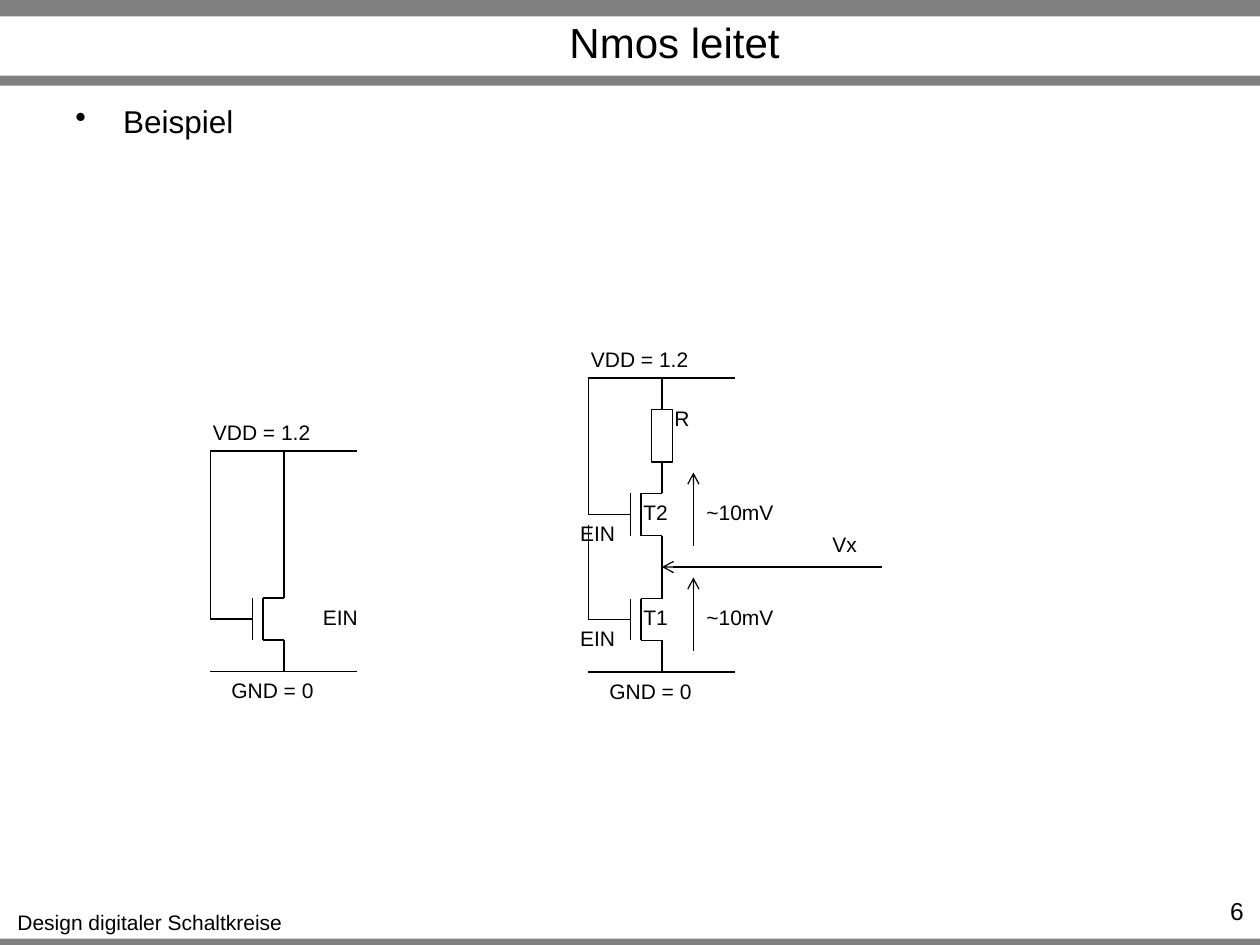
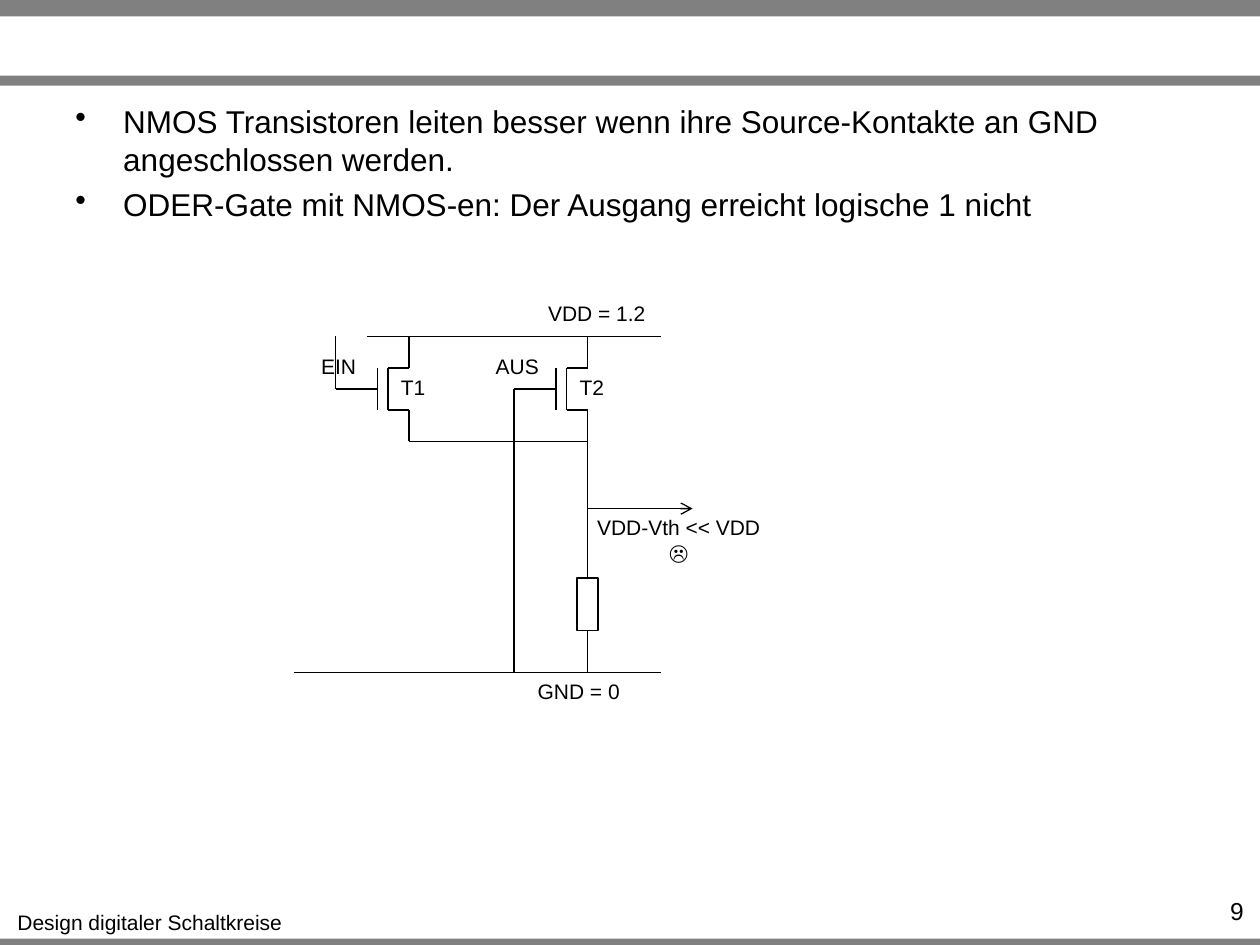
import dataclasses
import typing

import pptx
import pptx.dml.color
import pptx.enum.shapes
import pptx.enum.text
import pptx.oxml
import pptx.oxml.ns
import pptx.util

Inches = pptx.util.Inches
Pt = pptx.util.Pt
ALIGN = pptx.enum.text.PP_ALIGN
ANCHOR = pptx.enum.text.MSO_ANCHOR
RECTANGLE = pptx.enum.shapes.MSO_SHAPE.RECTANGLE
STRAIGHT = pptx.enum.shapes.MSO_CONNECTOR.STRAIGHT

COLORS = {"ink": "000000", "band": "808080"}
FONT = "Arial"
WIRE_WIDTH = Pt(0.75)
GRID = 1 / 12  # circuit grid step in inches
BANDS = [(7.45, 0.08), (0, 0.13), (0.6, 0.08)]  # top, height
LABEL_WIDTHS = {"VDD = 1.2": 0.98, "GND = 0": 0.86, "~10mV": 0.74,
                "EIN": 0.48, "AUS": 0.55, "T1": 0.4, "T2": 0.4,
                "R": 0.32, "Vx": 0.4}


def color(name):
    return pptx.dml.color.RGBColor.from_string(COLORS[name])


def drawing_element(tag, attributes=""):
    namespace = pptx.oxml.ns.nsdecls("a")
    return pptx.oxml.parse_xml(f"<a:{tag} {namespace} {attributes}/>")


def add_text(slide, box, text, size=12, align=ALIGN.CENTER, anchor=ANCHOR.TOP,
             wrap=True, bullet=False, side_inset=0.1):
    """Write text into box (left, top, width, height in inches), a paragraph per line."""
    frame = slide.shapes.add_textbox(*map(Inches, box)).text_frame
    frame.word_wrap = wrap
    frame.vertical_anchor = anchor
    frame.margin_left = frame.margin_right = Inches(side_inset)
    frame.text = text
    for paragraph in frame.paragraphs:
        paragraph.alignment = align
        font = paragraph.runs[0].font
        font.name, font.size = FONT, Pt(size)
        font.color.rgb = color("ink")
        if bullet:
            paragraph.space_before = Pt(4.5)
            properties = paragraph._p.get_or_add_pPr()
            properties.set("marL", str(Inches(0.38)))
            properties.set("indent", str(-Inches(0.38)))
            properties.append(drawing_element("buChar", 'char="•"'))


def add_rectangle(slide, box, fill=None, line=None):
    shape = slide.shapes.add_shape(RECTANGLE, *map(Inches, box))
    shape.shadow.inherit = False
    if fill:
        shape.fill.solid()
        shape.fill.fore_color.rgb = color(fill)
    else:
        shape.fill.background()
    if line:
        shape.line.color.rgb = color(line)
        shape.line.width = WIRE_WIDTH
    else:
        shape.line.fill.background()


@dataclasses.dataclass
class Circuit:
    """Draws parts in grid steps from its left and top, which are in inches."""
    slide: typing.Any
    left: float
    top: float

    def place(self, x, y):
        return self.left + x * GRID, self.top + y * GRID

    def wire(self, x1, y1, x2, y2, arrow=False):
        ends = self.place(x1, y1) + self.place(x2, y2)
        connector = self.slide.shapes.add_connector(STRAIGHT, *map(Inches, ends))
        connector.line.color.rgb = color("ink")
        connector.line.width = WIRE_WIDTH
        if arrow:
            connector.line._get_or_add_ln().append(
                drawing_element("tailEnd", 'type="arrow"'))
        connector._element.spPr.append(drawing_element("effectLst"))

    def wires(self, *segments):
        for segment in segments:
            self.wire(*segment)

    def label(self, text, x, y):
        box = (*self.place(x, y), LABEL_WIDTHS[text], 0.3)
        add_text(self.slide, box, text, wrap=False)

    def labels(self, *items):
        for item in items:
            self.label(*item)

    def resistor(self, x, y):
        add_rectangle(self.slide, (*self.place(x, y), 2 * GRID, 5 * GRID), line="ink")

    def transistor(self, x, y):
        """Gate lead at the left, drain and source at the right, 7 by 10 steps."""
        part = Circuit(self.slide, *self.place(x, y))
        part.wires(
            (7, 7, 5, 7), (5, 7, 5, 3), (2, 5, 4, 5), (4, 7, 4, 3),
            (7, 3, 5, 3), (7, 3, 7, 0), (7, 10, 7, 7), (2, 5, 0, 5))


def add_base_slide(deck, number, body, title=None):
    slide = deck.slides.add_slide(deck.slide_layouts[6])
    for top, height in BANDS:
        add_rectangle(slide, (0, top, 10, height), fill="band")
    add_text(slide, (0.03, 7.17, 2.32, 0.3), "Design digitaler Schaltkreise", wrap=False)
    if title:
        add_text(slide, (1.3, 0.14, 8.2, 0.38), title, size=24, anchor=ANCHOR.MIDDLE)
    add_text(slide, (0.5, 0.76, 9, 0.66), body, size=18, align=ALIGN.LEFT, bullet=True)
    add_text(slide, (9.1, 7.06, 0.87, 0.24), number, size=14, align=ALIGN.RIGHT)
    return slide


def draw_single_nmos(slide, left, top):
    circuit = Circuit(slide, left, top)
    circuit.transistor(0, 11)
    circuit.wires((7, 11, 7, 0), (0, 21, 14, 21), (0, 0, 14, 0), (0, 16, 0, 0))
    circuit.labels(("VDD = 1.2", -1, -3.6), ("GND = 0", 0.75, 21), ("EIN", 9.5, 14))


def draw_stacked_nmos(slide, left, top):
    circuit = Circuit(slide, left, top)
    circuit.wires((0, 28, 14, 28), (0, 0, 14, 0), (7, 3, 7, 0),
                  (0, 23, 0, 14), (0, 13, 0, 0))
    circuit.resistor(6, 3)
    for name, y in (("T1", 18), ("T2", 8)):
        circuit.transistor(0, y)
        circuit.wire(10, y + 8, 10, y + 1, arrow=True)
        circuit.labels(("~10mV", 10, y + 3), ("EIN", -2, y + 5), (name, 4, y + 3))
    circuit.wire(28, 18, 7, 18, arrow=True)
    circuit.labels(("VDD = 1.2", -1, -3.6), ("GND = 0", 0.75, 28),
                   ("R", 7, 2), ("Vx", 22, 14))


def draw_or_gate(slide, left, top):
    circuit = Circuit(slide, left, top)
    for name, x in (("T1", 4), ("T2", 21)):
        circuit.transistor(x, 0)
        circuit.label(name, x + 5, 3)
    circuit.wires((0, 32, 21, 32), (21, 32, 35, 32), (7, 0, 35, 0),
                  (28, 23, 28, 20), (28, 32, 28, 28), (4, 0, 4, 5),
                  (28, 21, 28, 10), (11, 10, 28, 10), (21, 5, 21, 32))
    circuit.resistor(27, 23)
    circuit.wire(28, 16.4, 38, 16.4, arrow=True)
    circuit.labels(("VDD = 1.2", 23, -4), ("GND = 0", 22, 32),
                   ("EIN", 1.4, 1), ("AUS", 18, 1))
    add_text(slide, (*circuit.place(27.8, 16.4), 1.48, 0.5),
             "VDD-Vth << VDD ☹", side_inset=0.05)


def main():
    deck = pptx.Presentation()
    deck.slide_width, deck.slide_height = Inches(10), Inches(7.5)

    conducting = add_base_slide(deck, "6", "Beispiel", title="Nmos leitet ")
    draw_single_nmos(conducting, 1.67, 3.58)
    draw_stacked_nmos(conducting, 4.67, 3)

    or_gate = add_base_slide(
        deck, "9",
        "NMOS Transistoren leiten besser wenn ihre Source-Kontakte an GND "
        "angeschlossen werden.\n"
        "ODER-Gate mit NMOS-en: Der Ausgang erreicht logische 1 nicht")
    draw_or_gate(or_gate, 2.33, 2.67)

    deck.save("out.pptx")


if __name__ == "__main__":
    main()
